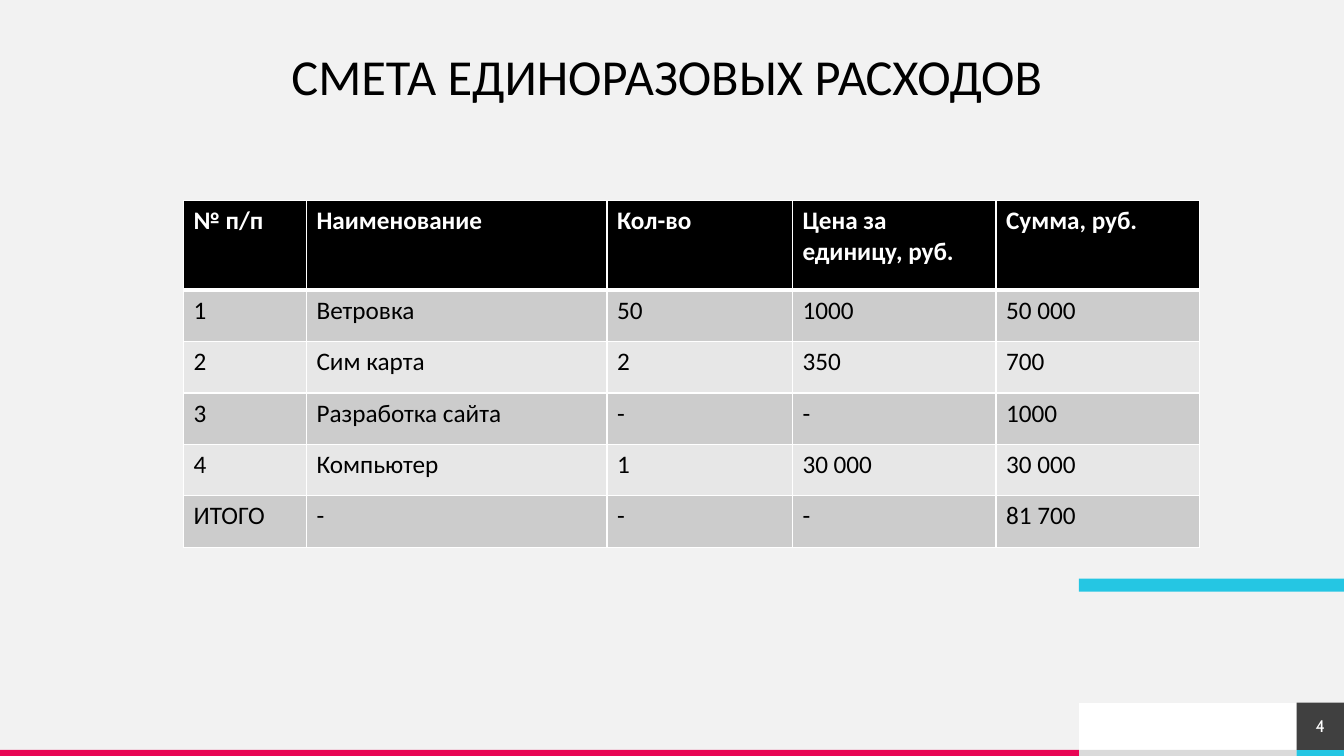
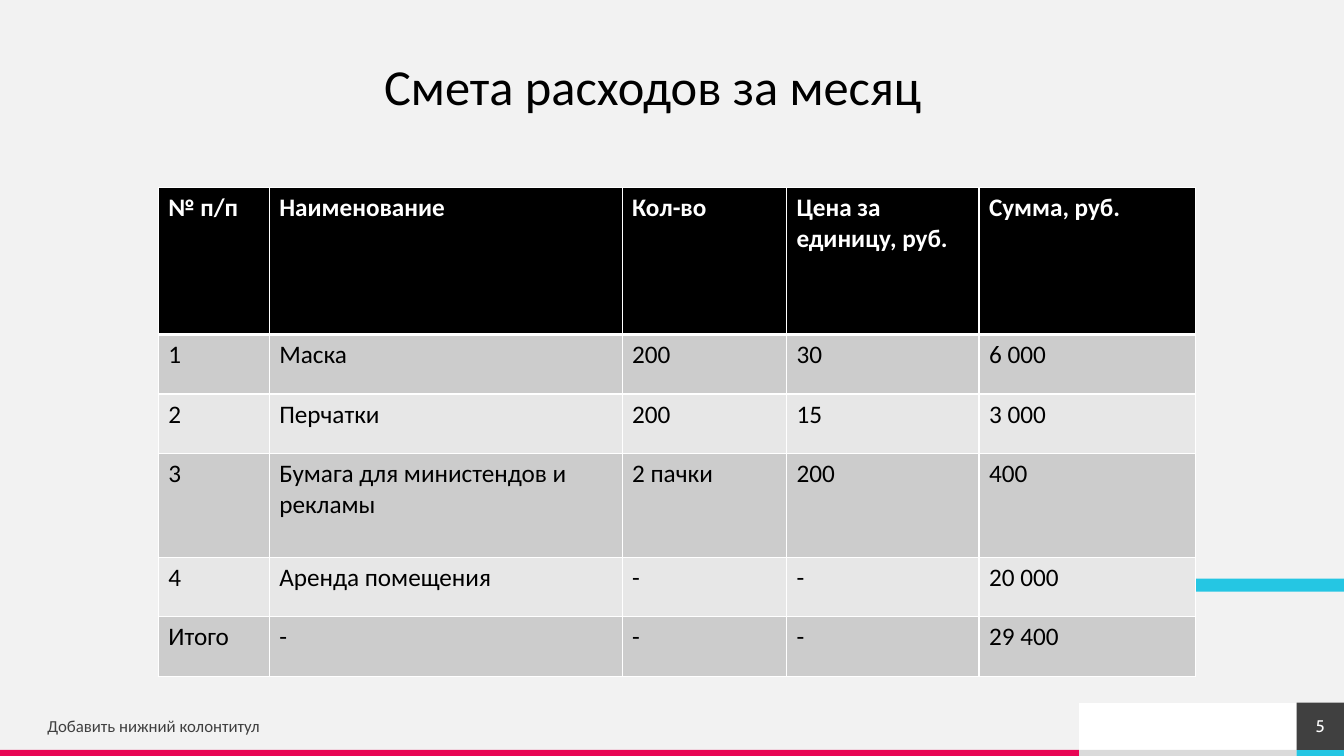
from lxml.etree import SubElement
from pptx import Presentation
from pptx.dml.color import RGBColor
from pptx.enum.shapes import MSO_CONNECTOR, MSO_SHAPE
from pptx.enum.text import MSO_ANCHOR, MSO_AUTO_SIZE, PP_ALIGN
from pptx.oxml.ns import qn
from pptx.util import Inches, Pt

BODY_FONT, NUMBER_FONT = "Calibri", "Cabin"
BLACK, WHITE, DARK = "000000", "FFFFFF", "404040"
PAPER, GRAY, CYAN, PINK = "F2F2F2", "DADADA", "25C6E3", "E80554"
BANDS = ("CCCCCC", "E7E7E7")

WIDTH, HEIGHT = 13.33, 7.5
FOOTER_TOP, STRIP_TOP = 6.97, 7.44
PANEL_LEFT, NUMBER_LEFT = 10.7, 12.86
FOOTER_HEIGHT = STRIP_TOP - FOOTER_TOP

HEADINGS = ("№ п/п", "Наименование", "Кол-во", "Цена за единицу, руб.", "Сумма, руб.")
ESTIMATES = (
    {
        "number": "4",
        "title": "СМЕТА ЕДИНОРАЗОВЫХ РАСХОДОВ",
        "title_box": (2.03, 0.39, 9.17, 0.71),
        "table_corner": (1.82, 1.99),
        "columns": (1.22, 2.98, 1.84, 2.02, 2.02),
        "rows": (0.89, 0.51, 0.51, 0.51, 0.51, 0.51),
        "entries": (
            ("1", "Ветровка", "50", "1000", "50 000"),
            ("2", "Сим карта", "2", "350", "700"),
            ("3", "Разработка сайта", "-", "-", "1000"),
            ("4", "Компьютер", "1", "30 000", "30 000"),
            ("ИТОГО", "-", "-", "-", "81 700"),
        ),
    },
    {
        "number": "5",
        "title": "Смета расходов за месяц",
        "title_box": (1.91, 0.49, 9.13, 0.71),
        "table_corner": (1.57, 1.86),
        "columns": (1.1, 3.5, 1.63, 1.91, 2.15),
        "rows": (1.46, 0.59, 0.59, 1.03, 0.59, 0.59),
        "entries": (
            ("1", "Маска", "200", "30", "6 000"),
            ("2", "Перчатки", "200", "15", "3 000"),
            ("3", "Бумага для министендов и рекламы", "2 пачки", "200", "400"),
            ("4", "Аренда помещения", "-", "-", "20 000"),
            ("Итого", "-", "-", "-", "29 400"),
        ),
        "footer": "Добавить нижний колонтитул",
    },
)


def color(value):
    return RGBColor.from_string(value)


def inches(box):
    return [Inches(length) for length in box]


def apply_format(target, values):
    for name, value in values.items():
        setattr(target, name, value)


def paint(fill, value):
    fill.solid()
    fill.fore_color.rgb = color(value)


def add_run(paragraph, text, size, font_color, name=BODY_FONT, bold=False):
    run = paragraph.add_run()
    run.text = text
    apply_format(run.font, {"size": Pt(size), "name": name, "bold": bold})
    run.font.color.rgb = color(font_color)


def set_frame(frame, insets=(0, 0, 0, 0)):
    """Format a text frame and return its first paragraph."""
    sides = ("margin_left", "margin_top", "margin_right", "margin_bottom")
    apply_format(frame, dict(zip(sides, inches(insets))))
    apply_format(frame, {"word_wrap": True, "auto_size": MSO_AUTO_SIZE.NONE,
                         "vertical_anchor": MSO_ANCHOR.MIDDLE})
    return frame.paragraphs[0]


def add_rectangle(slide, box, fill_color):
    shape = slide.shapes.add_shape(MSO_SHAPE.RECTANGLE, *inches(box))
    shape.shadow.inherit = False
    paint(shape.fill, fill_color)
    shape.line.fill.background()
    return shape


def add_hairline(slide, top):
    line = slide.shapes.add_connector(
        MSO_CONNECTOR.STRAIGHT, *inches((WIDTH, top, 0, top)))
    line.line.color.rgb = color(PAPER)
    line.line.width = Pt(0.5)
    SubElement(line._element.spPr, qn("a:effectLst"))
    return line


def decorate_layout(layout, slide):
    """Draw the shared bands on a slide and move them to its layout."""
    paint(layout.background.fill, PAPER)
    panel_width = NUMBER_LEFT - PANEL_LEFT
    strip = HEIGHT - STRIP_TOP
    bands = (
        ((PANEL_LEFT, FOOTER_TOP, panel_width, FOOTER_HEIGHT), WHITE),
        ((0, FOOTER_TOP, PANEL_LEFT, FOOTER_HEIGHT), PAPER),
        ((PANEL_LEFT, 5.74, WIDTH - PANEL_LEFT, 0.13), CYAN),
        ((PANEL_LEFT, STRIP_TOP, panel_width, strip), GRAY),
        ((0, STRIP_TOP, PANEL_LEFT, strip), PINK),
        ((NUMBER_LEFT, STRIP_TOP, WIDTH - NUMBER_LEFT, strip), CYAN),
    )
    shapes = [add_rectangle(slide, box, fill_color) for box, fill_color in bands]
    shapes.append(add_hairline(slide, FOOTER_TOP))
    for shape in shapes:
        layout.shapes.element.append(shape.element)


def set_title(slide, box, text):
    title = slide.shapes.title
    apply_format(title, dict(zip(("left", "top", "width", "height"), inches(box))))
    paragraph = set_frame(title.text_frame, (0.1, 0.05, 0.1, 0.05))
    paragraph.alignment = PP_ALIGN.CENTER
    add_run(paragraph, text, 36, BLACK)


def set_borders(cell, widths):
    properties = cell._tc.get_or_add_tcPr()
    for position, (side, width) in enumerate(widths.items()):
        line = properties.makeelement(qn(f"a:{side}"), {"w": str(Pt(width))})
        fill = SubElement(line, qn("a:solidFill"))
        SubElement(fill, qn("a:srgbClr"), val=WHITE)
        properties.insert(position, line)


def add_estimate_table(slide, corner, columns, rows, entries):
    box = (*corner, sum(columns), sum(rows))
    table = slide.shapes.add_table(len(rows), len(columns), *inches(box)).table
    table.horz_banding = False
    for column, width in zip(table.columns, columns):
        column.width = Inches(width)
    for index, (row, height, texts) in enumerate(
            zip(table.rows, rows, (HEADINGS, *entries))):
        row.height = Inches(height)
        header = index == 0
        widths = {"lnL": 1, "lnR": 1, "lnT": 3 if index == 1 else 1,
                  "lnB": 3 if header else 1}
        for cell, text in zip(row.cells, texts):
            paint(cell.fill, BLACK if header else BANDS[(index - 1) % 2])
            set_borders(cell, widths)
            add_run(cell.text_frame.paragraphs[0], text, 18,
                    WHITE if header else BLACK, bold=header)


def add_footer(slide, box, text):
    textbox = slide.shapes.add_textbox(*inches(box))
    add_run(set_frame(textbox.text_frame), text, 12, DARK)


def add_number(slide, box, number):
    paragraph = set_frame(add_rectangle(slide, box, DARK).text_frame)
    paragraph.alignment = PP_ALIGN.CENTER
    add_run(paragraph, number, 12, WHITE, NUMBER_FONT)


def fill_estimate_slide(slide, estimate):
    if "footer" in estimate:
        add_footer(slide, (0.47, 7.04, 6.19, 0.32), estimate["footer"])
    add_number(slide, (NUMBER_LEFT, FOOTER_TOP, WIDTH - NUMBER_LEFT, FOOTER_HEIGHT),
               estimate["number"])
    set_title(slide, estimate["title_box"], estimate["title"])
    add_estimate_table(slide, estimate["table_corner"], estimate["columns"],
                       estimate["rows"], estimate["entries"])


def main():
    presentation = Presentation()
    presentation.slide_width = Inches(WIDTH)
    presentation.slide_height = Inches(HEIGHT)
    layout = presentation.slide_layouts.get_by_name("Title Only")
    slides = [presentation.slides.add_slide(layout) for _ in ESTIMATES]
    decorate_layout(layout, slides[0])
    for slide, estimate in zip(slides, ESTIMATES):
        fill_estimate_slide(slide, estimate)
    presentation.save("out.pptx")


if __name__ == "__main__":
    main()
